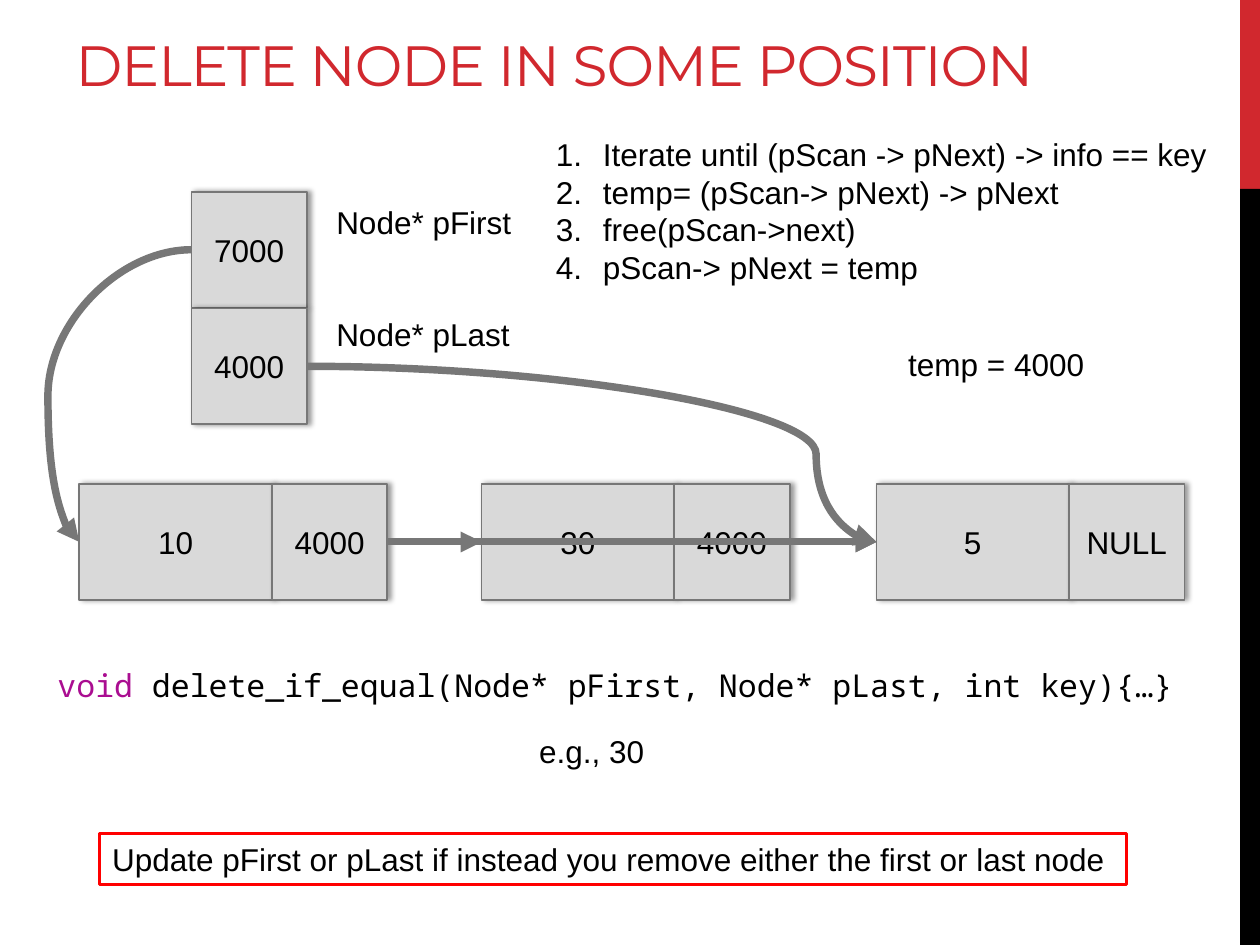
from lxml import etree
from pptx import Presentation
from pptx.dml.color import RGBColor
from pptx.enum.shapes import MSO_CONNECTOR, MSO_SHAPE
from pptx.enum.text import MSO_ANCHOR, MSO_AUTO_SIZE, PP_ALIGN
from pptx.oxml.ns import qn
from pptx.util import Cm, Pt

RECT = MSO_SHAPE.RECTANGLE
STRAIGHT, CURVE = MSO_CONNECTOR.STRAIGHT, MSO_CONNECTOR.CURVE
LEFT_SIDE, RIGHT_SIDE = 1, 3

# Content
TITLE = "DELETE NODE IN SOME POSITION"
STEPS = [
    "Iterate until (pScan -> pNext) -> info == key",
    "temp= (pScan-> pNext) -> pNext",
    "free(pScan->next)",
    "pScan-> pNext = temp",
]
NODES = [("10", "4000", 1.6), ("30", "4000", 9.71), ("5", "NULL", 17.67)]  # value, next, left
POINTERS = ["7000", "4000"]
LABELS = [  # text, left, top, width
    ("Node* pFirst", 6.53, 3.96, 4.06),
    ("Node* pLast", 6.53, 6.22, 4.04),
    ("e.g., 30", 10.62, 14.63, 2.64),
    ("temp = 4000", 18.06, 6.83, 4.09),
]
CODE = [("void ", "keyword"), ("delete_if_equal(Node* pFirst, Node* pLast, int key){…}", "text")]
WARNING = "Update pFirst or pLast if instead you remove either the first or last node"

# Formats
COLORS = {"red": "D1282E", "black": "000000", "text": "000000", "cell": "D9D9D9",
          "edge": "777777", "keyword": "AA0D91", "warning": "FF0000"}
CELL, VALUE_WIDTH, NODE_TOP = 2.33, 3.88, 9.76
POINTER_LEFT, POINTER_TOP, POINTER_STEP = 3.86, 3.87, 2.35
LABEL_HEIGHT = 1.02
TITLE_FORMAT = {"name": "Montserrat", "size": Pt(32.4)}
BODY_FORMAT = {"name": "Arial", "size": Pt(18)}
CODE_FORMAT = {"name": "Noto Sans Mono", "size": Pt(18)}
LABEL_FRAME = {"word_wrap": False, "auto_size": MSO_AUTO_SIZE.SHAPE_TO_FIT_TEXT,
               "vertical_anchor": MSO_ANCHOR.TOP}
CELL_FRAME = {"word_wrap": True, "vertical_anchor": MSO_ANCHOR.MIDDLE}
TITLE_FRAME = {"word_wrap": True, "auto_size": MSO_AUTO_SIZE.NONE,
               "vertical_anchor": MSO_ANCHOR.BOTTOM}


def rgb(key):
    return RGBColor.from_string(COLORS[key])


def apply(target, formats):
    for attribute, value in formats.items():
        setattr(target, attribute, value)


def place(placeholder, left, top, width, height):
    apply(placeholder, {"left": Cm(left), "top": Cm(top),
                        "width": Cm(width), "height": Cm(height)})


def write(paragraph, text, color="text", formats=BODY_FORMAT, align=PP_ALIGN.LEFT):
    paragraph.alignment = align
    run = paragraph.add_run()
    run.text = text
    apply(run.font, formats)
    run.font.color.rgb = rgb(color)
    return run


def add_box(left, top, width, height, fill=None, edge=None, edge_width=1):
    box = slide.shapes.add_shape(RECT, Cm(left), Cm(top), Cm(width), Cm(height))
    box.shadow.inherit = False
    if fill:
        box.fill.solid()
        box.fill.fore_color.rgb = rgb(fill)
    else:
        box.fill.background()
    if edge:
        box.line.color.rgb = rgb(edge)
        box.line.width = Pt(edge_width)
    else:
        box.line.fill.background()
    return box


def add_cell(text, left, top, width=CELL):
    cell = add_box(left, top, width, CELL, "cell", "edge")
    effects = cell._element.spPr.find(qn("a:effectLst"))
    shadow = etree.SubElement(effects, qn("a:outerShdw"), blurRad=str(Pt(3.1)),
                              dist=str(Pt(1.8)), dir="0", rotWithShape="0")
    shade = etree.SubElement(shadow, qn("a:srgbClr"), val=COLORS["black"])
    etree.SubElement(shade, qn("a:alpha"), val="40000")
    apply(cell.text_frame, CELL_FRAME)
    write(cell.text_frame.paragraphs[0], text, align=PP_ALIGN.CENTER)
    return cell


def add_label(left, top, width):
    frame = slide.shapes.add_textbox(Cm(left), Cm(top), Cm(width), Cm(LABEL_HEIGHT)).text_frame
    apply(frame, LABEL_FRAME)
    return frame


def add_arrow(kind, start, end, width):
    arrow = slide.shapes.add_connector(kind, *start, *end)
    arrow.line.color.rgb = rgb("edge")
    arrow.line.width = Pt(width)
    properties = arrow._element.spPr
    etree.SubElement(properties.find(qn("a:ln")), qn("a:tailEnd"), type="triangle")
    etree.SubElement(properties, qn("a:effectLst"))
    return arrow


def side(cell, index):
    x = cell.left if index == LEFT_SIDE else cell.left + cell.width
    return x, cell.top + cell.height // 2


def add_link(source, target):
    link = add_arrow(STRAIGHT, side(source, RIGHT_SIDE), side(target, LEFT_SIDE), 4)
    link.begin_connect(source, RIGHT_SIDE)
    link.end_connect(target, LEFT_SIDE)


def add_curve(source, source_side, target, bend):
    curve = add_arrow(CURVE, side(source, source_side), side(target, LEFT_SIDE), 4.25)
    guides = curve._element.spPr.find(qn("a:prstGeom")).find(qn("a:avLst"))
    etree.SubElement(guides, qn("a:gd"), name="adj1", fmla=f"val {bend}")


presentation = Presentation()
presentation.slide_width, presentation.slide_height = Cm(25.4), Cm(19.05)
slide = presentation.slides.add_slide(presentation.slide_layouts[1])

# Side bar
add_box(25, 0, 0.4, 3.81, "red")
add_box(25, 3.81, 0.4, 15.24, "black")

# Title
title = slide.shapes.title
place(title, 1.27, 0.43, 22.91, 1.68)
apply(title.text_frame, TITLE_FRAME)
title_run = write(title.text_frame.paragraphs[0], TITLE, "red", TITLE_FORMAT)
title_run.font._element.set("spc", "-60")

# Numbered steps
steps = slide.placeholders[1]
place(steps, 10.95, 2.59, 13.77, 3.33)
apply(steps.text_frame, LABEL_FRAME)
for number, step in enumerate(STEPS):
    paragraph = steps.text_frame.add_paragraph() if number else steps.text_frame.paragraphs[0]
    paragraph.space_before = Pt(0)
    properties = paragraph._p.get_or_add_pPr()
    properties.set("marL", str(Cm(0.95)))
    properties.set("indent", str(-Cm(0.95)))
    etree.SubElement(properties, qn("a:buFont"), typeface="+mj-lt")
    etree.SubElement(properties, qn("a:buAutoNum"), type="arabicPeriod")
    write(paragraph, step)

# List nodes and the two pointers
nodes = [(add_cell(value, left, NODE_TOP, VALUE_WIDTH),
          add_cell(following, left + VALUE_WIDTH, NODE_TOP))
         for value, following, left in NODES]
first, last = [add_cell(address, POINTER_LEFT, POINTER_TOP + row * POINTER_STEP)
               for row, address in enumerate(POINTERS)]

# Links: each node to the next, then the bypass of the deleted one
for source, target in [(0, 1), (1, 2), (0, 2)]:
    add_link(nodes[source][1], nodes[target][0])
add_curve(first, LEFT_SIDE, nodes[0][0], 128000)
add_curve(last, RIGHT_SIDE, nodes[2][0], 89400)

# Labels
for text, left, top, width in LABELS:
    write(add_label(left, top, width).paragraphs[0], text)

# Function signature
signature = add_label(0.91, 13.31, 23.62)
signature.word_wrap = True
for text, color in CODE:
    write(signature.paragraphs[0], text, color, CODE_FORMAT)

# Warning
warning = add_box(2.01, 16.81, 20.7, LABEL_HEIGHT, edge="warning", edge_width=1.75)
apply(warning.text_frame, LABEL_FRAME)
write(warning.text_frame.paragraphs[0], WARNING)

presentation.save("out.pptx")
